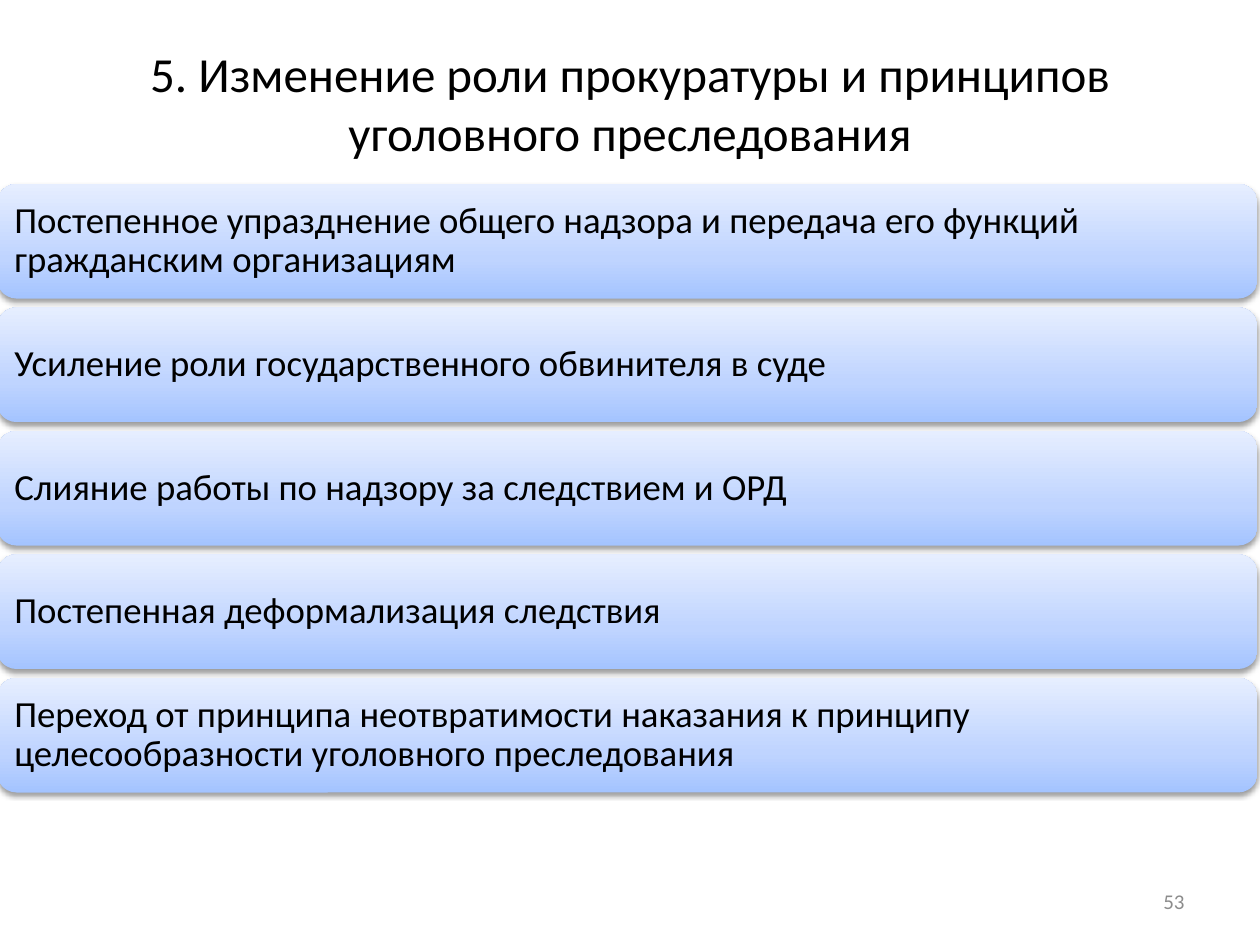
from copy import deepcopy

from lxml import etree
from pptx import Presentation
from pptx.dml.color import RGBColor
from pptx.enum.shapes import MSO_SHAPE
from pptx.enum.text import MSO_ANCHOR, PP_ALIGN
from pptx.oxml import parse_xml
from pptx.oxml.ns import nsdecls, qn
from pptx.util import Inches, Pt

COLORS = {
    "text": "000000",
    "number": "8C8C8C",
    "shadow": "000000",
    "band_bottom": "A4C4FF",
    "band_middle": "BFD4FF",
    "band_top": "E6EEFF",
}
BAND_STOPS = ((0, "band_bottom"), (0.35, "band_middle"), (1, "band_top"))

TITLE = "5. Изменение роли прокуратуры и принципов уголовного преследования"
REFORMS = (
    "Постепенное упразднение общего надзора и передача его функций гражданским организациям",
    "Усиление роли государственного обвинителя в суде",
    "Слияние работы по надзору за следствием и ОРД",
    "Постепенная деформализация следствия",
    "Переход от принципа неотвратимости наказания к принципу "
    "целесообразности уголовного преследования",
)

TITLE_BOX = (0.5, 0.3, 9, 1.03)
REFORMS_BOX = (-0.02, 1.46, 10, 4.83)
NUMBER_BOX = (7.17, 6.95, 2.33, 0.4)
BAND_GAP = 0.07


def place(shape, box):
    for side, length in zip(("left", "top", "width", "height"), box):
        setattr(shape, side, Inches(length))


def write(shape, text, size, color, align, inset=(0.1, 0.05), line_spacing=None):
    """Fill the shape with one vertically centred paragraph."""
    frame = shape.text_frame
    across, down = map(Inches, inset)
    frame_format = {
        "word_wrap": True,
        "vertical_anchor": MSO_ANCHOR.MIDDLE,
        "margin_left": across,
        "margin_right": across,
        "margin_top": down,
        "margin_bottom": down,
    }
    for name, value in frame_format.items():
        setattr(frame, name, value)
    paragraph = frame.paragraphs[0]
    paragraph.alignment = align
    paragraph.line_spacing = line_spacing
    run = paragraph.add_run()
    run.text = text
    for name, value in {"name": "Calibri", "size": Pt(size)}.items():
        setattr(run.font, name, value)
    run.font.color.rgb = RGBColor.from_string(COLORS[color])


def shade_band(band):
    """Give the band its three-stop gradient and soft shadow."""
    band.line.fill.background()
    band.fill.gradient()
    band.fill.gradient_angle = 90
    properties = band.element.spPr
    stop_list = properties.find(qn("a:gradFill")).find(qn("a:gsLst"))
    stop_list.append(deepcopy(stop_list[0]))
    for stop, (position, color) in zip(band.fill.gradient_stops, BAND_STOPS):
        stop.position = position
        stop.color.rgb = RGBColor.from_string(COLORS[color])

    effects = etree.SubElement(properties, qn("a:effectLst"))
    effects.append(parse_xml(
        f'<a:outerShdw {nsdecls("a")} blurRad="{Pt(3.1)}" dist="{Pt(1.6)}" '
        f'dir="5400000" rotWithShape="0"><a:srgbClr val="{COLORS["shadow"]}">'
        '<a:alpha val="38000"/></a:srgbClr></a:outerShdw>'
    ))


def add_title(slide, box):
    title = slide.shapes.title
    place(title, box)
    write(title, TITLE, 28, "text", PP_ALIGN.CENTER)


def add_reforms(slide, box):
    left, top, width, height = box
    pitch = (height + BAND_GAP) / len(REFORMS)
    for row, reform in enumerate(REFORMS):
        band = slide.shapes.add_shape(MSO_SHAPE.ROUNDED_RECTANGLE, 0, 0, 0, 0)
        place(band, (left, top + row * pitch, width, pitch - BAND_GAP))
        shade_band(band)
        write(band, reform, 21, "text", PP_ALIGN.LEFT, (0.09, 0.09), 0.9)


def add_page_number(slide, box):
    number = slide.shapes.add_textbox(0, 0, 0, 0)
    place(number, box)
    write(number, "53", 12, "number", PP_ALIGN.RIGHT)


def main():
    deck = Presentation()
    deck.slide_width, deck.slide_height = Inches(10), Inches(7.5)
    slide = deck.slides.add_slide(deck.slide_layouts[5])
    add_title(slide, TITLE_BOX)
    add_reforms(slide, REFORMS_BOX)
    add_page_number(slide, NUMBER_BOX)
    deck.save("out.pptx")


if __name__ == "__main__":
    main()
